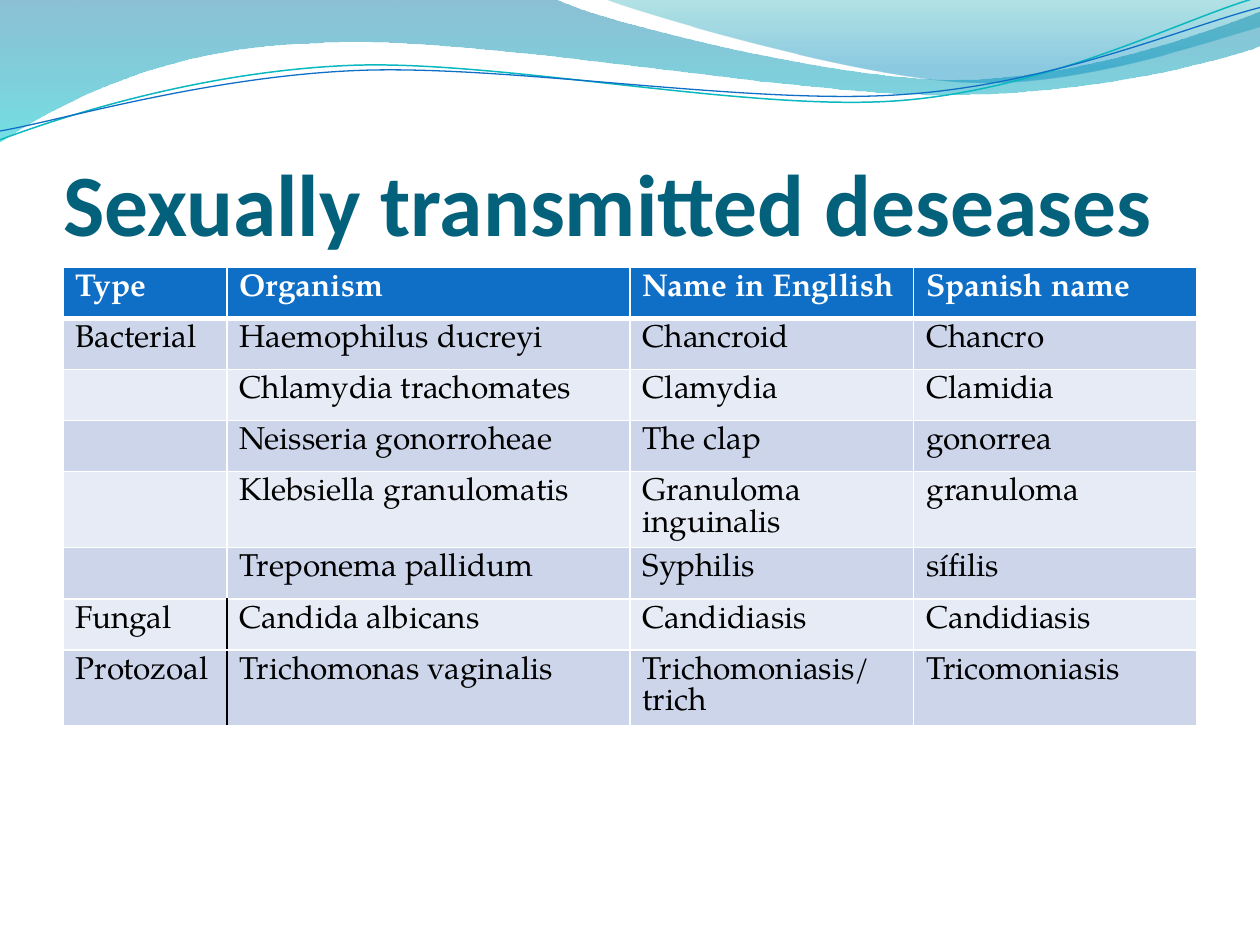
from lxml import etree
from pptx import Presentation
from pptx.dml.color import RGBColor
from pptx.enum import text
from pptx.oxml import ns
from pptx.util import Inches, Pt

TITLE = "Sexually transmitted deseases"
DISEASES = [
    ("Type", "Organism", "Name in Engllish", "Spanish name"),
    ("Bacterial", "Haemophilus ducreyi", "Chancroid", "Chancro"),
    ("", "Chlamydia trachomates", "Clamydia", "Clamidia"),
    ("", "Neisseria gonorroheae", "The clap", "gonorrea"),
    ("", "Klebsiella granulomatis", "Granuloma inguinalis", "granuloma"),
    ("", "Treponema pallidum", "Syphilis", "sífilis"),
    ("Fungal", "Candida albicans", "Candidiasis", "Candidiasis"),
    ("Protozoal", "Trichomonas vaginalis", "Trichomoniasis/\ntrich", "Tricomoniasis"),
]
COLUMN_WIDTHS = (1.3, 3.2, 2.25, 2.25)
TABLE_HEIGHT = 3.25
BLACK_DIVIDER_ROWS = (6, 7)
COLORS = {
    "title": "04617B", "header": "0F6FC6", "odd": "CCD5EA", "even": "E7EBF5",
    "white": "FFFFFF", "black": "000000", "teal": "0AB8BF",
    "deep": "0074A1", "cyan": "00C6CF", "green": "00A1A9", "sky": "008BBF",
}
BANDS = [
    ([(0, 0), (4.4, -0.01), (4.76, 0.17, 6.64, 0.63, 7.58, 0.63),
      (8.53, 0.63, 9.58, 0.26, 10, 0.09), (10.01, 0.36),
      (9.83, 0.44, 8.7, 0.76, 7.46, 0.75), (6.22, 0.75, 3.82, 0.28, 2.57, 0.34),
      (1.29, 0.36, 0.46, 0.83, -0.01, 1.13), (0, 0)],
     [(0, "deep", 45), (1, "cyan", 55)]),
    ([(4.79, -0.01), (5.09, 0.11, 6.82, 0.62, 7.69, 0.65),
      (8.56, 0.69, 9.61, 0.32, 10, 0.21), (10, 0), (4.79, -0.01)],
     [(0, "green", 30), (0.8, "sky", 45)]),
]
WAVES = [
    ([(0, 1.11), (0.48, 0.93, 1.58, 0.57, 2.77, 0.52),
      (3.95, 0.47, 5.93, 0.89, 7.13, 0.8), (8.33, 0.71, 9.38, 0.15, 9.98, -0.02)],
     "teal", 0.85),
    ([(0, 1.04), (0.47, 0.96, 1.64, 0.61, 2.83, 0.56),
      (4.03, 0.51, 5.97, 0.84, 7.17, 0.75), (8.36, 0.67, 9.41, 0.21, 10, 0.06)],
     "header", 0.75),
]


def rgb(name):
    return RGBColor.from_string(COLORS[name])


def add_curve(slide, outline, close):
    ends = [(Inches(segment[-2]), Inches(segment[-1])) for segment in outline]
    builder = slide.shapes.build_freeform(*ends[0])
    builder.add_line_segments(ends[1:], close=close)
    curve = builder.convert_to_shape()
    curve.shadow.inherit = False
    steps = list(curve._element.iter(ns.qn("a:lnTo")))
    for step, segment in zip(steps, outline[1:]):
        if len(segment) == 6:
            step.tag = ns.qn("a:cubicBezTo")
            controls = zip(segment[0:4:2], segment[1:4:2])
            for index, (x, y) in enumerate(controls):
                point = etree.Element(ns.qn("a:pt"), x=str(Inches(x) - curve.left),
                                      y=str(Inches(y) - curve.top))
                step.insert(index, point)
    return curve


def add_band(slide, outline, stops):
    band = add_curve(slide, outline, True)
    band.line.fill.background()
    band.fill.gradient()
    band.fill.gradient_angle = 270
    for stop, (position, color, _) in zip(band.fill.gradient_stops, stops):
        stop.position = position
        stop.color.rgb = rgb(color)
    for element, (_, _, opacity) in zip(band._element.iter(ns.qn("a:srgbClr")), stops):
        etree.SubElement(element, ns.qn("a:alpha"), val=str(opacity * 1000))


def add_wave(slide, outline, color, width):
    wave = add_curve(slide, outline, False)
    wave.fill.background()
    wave.line.color.rgb = rgb(color)
    wave.line.width = Pt(width)


def write(frame, content, font="TeX Gyre Pagella", size=18, color="black", bold=False):
    frame.text = content
    for paragraph in frame.paragraphs:
        paragraph.alignment = text.PP_ALIGN.LEFT
        for run in paragraph.runs:
            run.font.name = font
            run.font.size = Pt(size)
            run.font.bold = bold
            run.font.color.rgb = rgb(color)


def set_border(cell, side, color, width):
    line = etree.SubElement(cell._tc.get_or_add_tcPr(), ns.qn(f"a:ln{side}"),
                            w=str(Pt(width)))
    fill = etree.SubElement(line, ns.qn("a:solidFill"))
    etree.SubElement(fill, ns.qn("a:srgbClr"), val=COLORS[color])


def add_title(slide):
    title = slide.shapes.title
    title.left, title.top, title.width, title.height = map(Inches, (0.5, 0.77, 9, 1.25))
    frame = title.text_frame
    frame.word_wrap = True
    frame.auto_size = text.MSO_AUTO_SIZE.NONE
    frame.vertical_anchor = text.MSO_ANCHOR.BOTTOM
    frame.margin_left = frame.margin_right = frame.margin_bottom = 0
    frame.margin_top = Inches(0.05)
    write(frame, TITLE, font="Calibri", size=50, color="title", bold=True)


def add_disease_table(slide):
    table = slide.shapes.add_table(
        len(DISEASES), len(COLUMN_WIDTHS), Inches(0.5), Inches(2.12),
        Inches(sum(COLUMN_WIDTHS)), Inches(TABLE_HEIGHT)).table
    for column, width in zip(table.columns, COLUMN_WIDTHS):
        column.width = Inches(width)
    for r, entries in enumerate(DISEASES):
        header = r == 0
        band = "header" if header else ("even", "odd")[r % 2]
        for c, entry in enumerate(entries):
            cell = table.cell(r, c)
            write(cell.text_frame, entry, color="white" if header else "black", bold=header)
            for side in "LRTB":
                divider = r in BLACK_DIVIDER_ROWS and (c, side) in ((0, "R"), (1, "L"))
                thick = (r, side) in ((0, "B"), (1, "T"))
                set_border(cell, side, "black" if divider else "white", 3 if thick else 1)
            cell.fill.solid()
            cell.fill.fore_color.rgb = rgb(band)


def main():
    deck = Presentation()
    deck.slide_width, deck.slide_height = Inches(10), Inches(7.5)
    slide = deck.slides.add_slide(deck.slide_layouts[5])
    for outline, stops in BANDS:
        add_band(slide, outline, stops)
    for outline, color, width in WAVES:
        add_wave(slide, outline, color, width)
    add_title(slide)
    add_disease_table(slide)
    deck.save("out.pptx")


if __name__ == "__main__":
    main()
